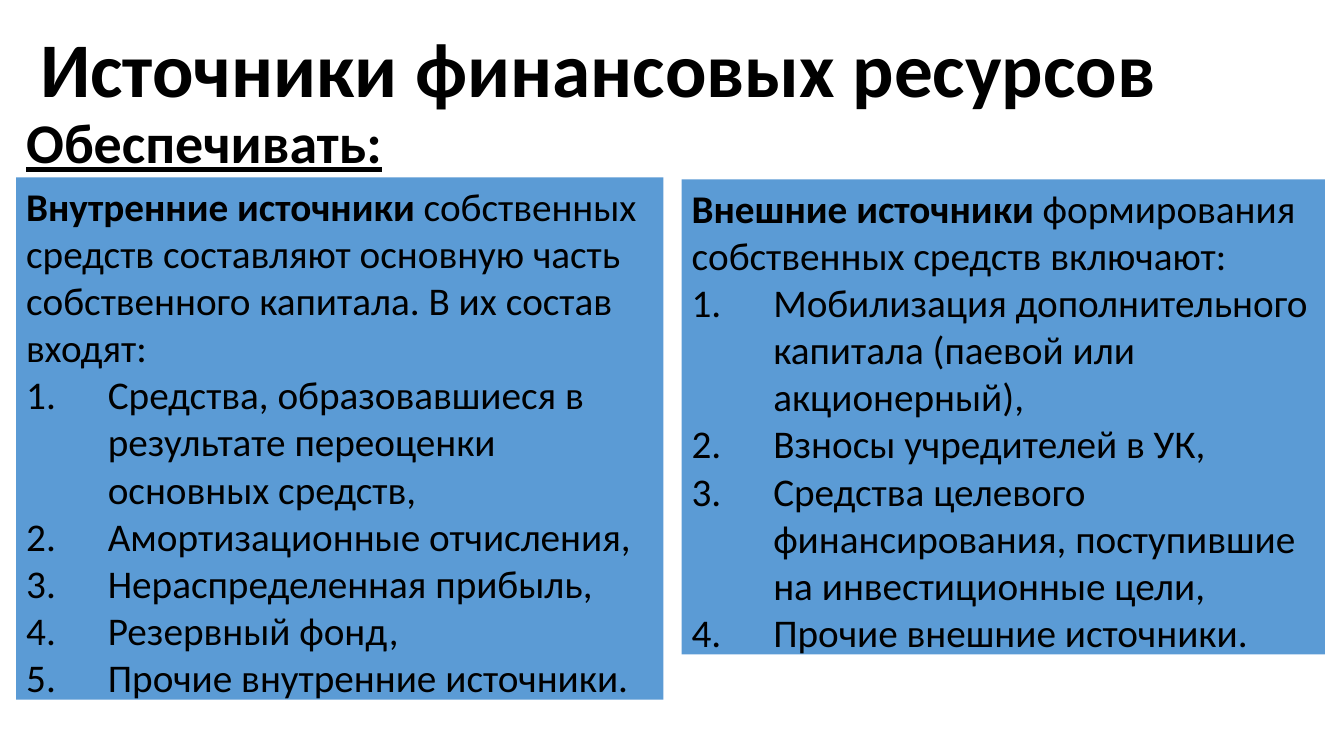
from lxml.etree import SubElement
from pptx import Presentation
from pptx.dml.color import RGBColor
from pptx.enum.text import MSO_ANCHOR, MSO_AUTO_SIZE, PP_ALIGN
from pptx.oxml.ns import qn
from pptx.util import Inches, Pt

BLACK = RGBColor(0x00, 0x00, 0x00)
BLUE = RGBColor(0x5B, 0x9B, 0xD5)
FONT = "Calibri"
NUMBER_INDENT = Inches(0.81)

INTERNAL = (
    "Внутренние источники ",
    "собственных средств составляют основную часть собственного капитала. В их состав входят:",
    ["Средства, образовавшиеся в результате переоценки основных средств,",
     "Амортизационные отчисления,",
     "Нераспределенная прибыль,",
     "Резервный фонд,",
     "Прочие внутренние источники."],
)
EXTERNAL = (
    "Внешние источники ",
    "формирования собственных средств включают:",
    ["Мобилизация дополнительного капитала (паевой или акционерный),",
     "Взносы учредителей в УК,",
     "Средства целевого финансирования, поступившие на инвестиционные цели,",
     "Прочие внешние источники."],
)


def place(box, left, top, width, height, auto_size=MSO_AUTO_SIZE.NONE):
    """Move a placeholder and return its text frame, anchored at the top."""
    box.left, box.top = Inches(left), Inches(top)
    box.width, box.height = Inches(width), Inches(height)
    frame = box.text_frame
    frame.word_wrap = True
    frame.auto_size = auto_size
    frame.vertical_anchor = MSO_ANCHOR.TOP
    return frame


def format_para(para, align=PP_ALIGN.LEFT, numbered=False):
    """Set alignment, spacing and numbering of a paragraph."""
    para.alignment = align
    para.line_spacing = 1.0
    para.space_before = para.space_after = Pt(0)
    properties = para._p.get_or_add_pPr()
    indent = NUMBER_INDENT if numbered else 0
    properties.set("marL", str(indent))
    properties.set("indent", str(-indent))
    if numbered:
        SubElement(properties, qn("a:buFont"), typeface="+mj-lt")
        SubElement(properties, qn("a:buAutoNum"), type="arabicPeriod")
    else:
        SubElement(properties, qn("a:buNone"))


def add_span(para, text, size, bold=False, underline=False):
    """Add one formatted run to a paragraph."""
    span = para.add_run()
    span.text = text
    span.font.name = FONT
    span.font.size = Pt(size)
    span.font.bold = bold
    span.font.underline = underline
    span.font.color.rgb = BLACK


def write_heading(box, bounds, text, size, align, underline=False):
    """Write a single bold line into a placeholder."""
    para = place(box, *bounds).paragraphs[0]
    format_para(para, align)
    add_span(para, text, size, bold=True, underline=underline)


def write_sources(box, bounds, sources):
    """Write a blue panel with an introduction and a numbered list."""
    term, introduction, items = sources
    frame = place(box, *bounds, auto_size=MSO_AUTO_SIZE.SHAPE_TO_FIT_TEXT)
    box.fill.solid()
    box.fill.fore_color.rgb = BLUE
    para = frame.paragraphs[0]
    format_para(para)
    add_span(para, term, 28, bold=True)
    add_span(para, introduction, 28)
    for item in items:
        para = frame.add_paragraph()
        format_para(para, numbered=True)
        add_span(para, item, 28)


def build_sources_slide(deck):
    """Build the comparison of internal and external sources."""
    page = deck.slides.add_slide(deck.slide_layouts.get_by_name("Comparison"))
    title, subtitle, left_list, spare, right_list = list(page.placeholders)[:5]
    write_heading(title, (0.12, 0.15, 11.63, 0.85),
                  "Источники финансовых ресурсов", 55.2, PP_ALIGN.CENTER)
    write_heading(subtitle, (0.16, 1.02, 8.59, 0.57),
                  "Обеспечивать:", 40, PP_ALIGN.LEFT, underline=True)
    write_sources(left_list, (0.16, 1.76, 6.42, 5.28), INTERNAL)
    write_sources(right_list, (6.76, 1.78, 6.38, 4.81), EXTERNAL)
    for box in [spare, *list(page.placeholders)[5:]]:
        box.element.getparent().remove(box.element)


def main():
    """Create and save the deck."""
    deck = Presentation()
    deck.slide_width, deck.slide_height = Inches(13.33), Inches(7.5)
    build_sources_slide(deck)
    deck.save("out.pptx")


if __name__ == "__main__":
    main()
